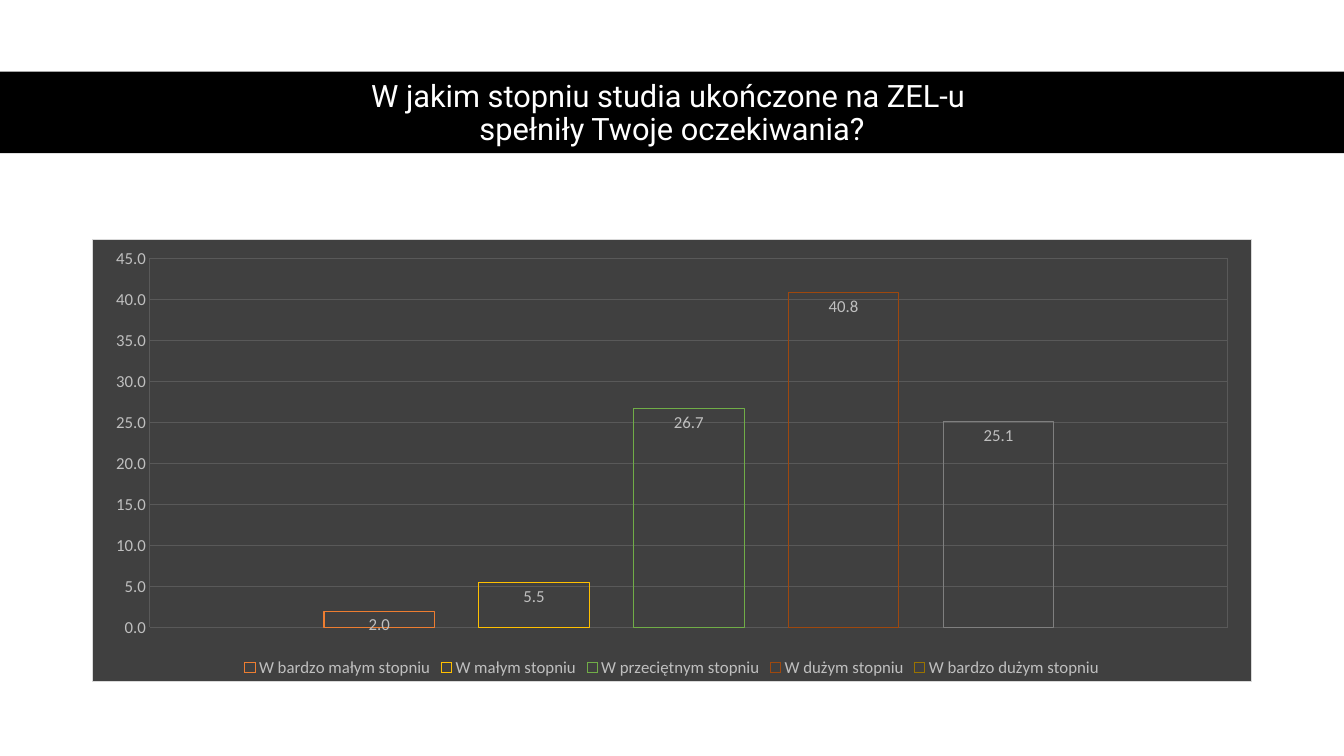
import pptx
import pptx.chart.data
import pptx.dml.color
import pptx.enum.chart
import pptx.enum.shapes
import pptx.enum.text
import pptx.oxml
import pptx.util
from dataclasses import dataclass

Pt = pptx.util.Pt
RGB = pptx.dml.color.RGBColor.from_string


@dataclass(frozen=True)
class Theme:
    band: str = "000000"
    title: str = "FFFFFF"
    panel: str = "404040"
    border: str = "D9D9D9"
    grid: str = "595959"
    label: str = "BFBFBF"
    last_bar: str = "7F7F7F"
    title_font: str = "Roboto"
    chart_font: str = "Calibri"
    title_size: int = 22
    label_size: int = 12
    line: float = 0.75
    number: str = "###0.0"


THEME = Theme()
TITLE = "W jakim stopniu studia ukończone na ZEL-u \vspełniły Twoje oczekiwania?"
ANSWERS = [
    ("W bardzo małym stopniu", 2.0, "ED7D31"),
    ("W małym stopniu", 5.5, "FFC000"),
    ("W przeciętnym stopniu", 26.7, "70AD47"),
    ("W dużym stopniu", 40.8, "9E480E"),
    ("W bardzo dużym stopniu", 25.1, "997300"),
]


def style_font(font, name, size, color):
    font.name = name
    font.size = Pt(size)
    font.color.rgb = RGB(color)


def style_label(font):
    style_font(font, THEME.chart_font, THEME.label_size, THEME.label)


def style_line(line, color):
    line.color.rgb = RGB(color)
    line.width = Pt(THEME.line)


def add_title_band(s, x, y, w, h):
    """Black band over the full width, with the title inset on both sides."""
    band = s.shapes.add_shape(
        pptx.enum.shapes.MSO_SHAPE.RECTANGLE, Pt(x), Pt(y), Pt(w), Pt(h))
    band.shadow.inherit = False
    band.fill.solid()
    band.fill.fore_color.rgb = RGB(THEME.band)
    band.line.fill.background()

    title = s.shapes.title
    inset = 66
    title.left, title.top = Pt(x + inset), Pt(y + 2)
    title.width, title.height = Pt(w - 2 * inset), Pt(h - 2)
    s.shapes._spTree.append(title._element)  # in front of the band
    tf = title.text_frame
    tf.word_wrap = True
    tf.auto_size = pptx.enum.text.MSO_AUTO_SIZE.NONE
    tf.vertical_anchor = pptx.enum.text.MSO_ANCHOR.MIDDLE
    tf.text = TITLE
    p = tf.paragraphs[0]
    p.alignment = pptx.enum.text.PP_ALIGN.CENTER
    p.line_spacing = 0.9
    for r in p.runs:
        style_font(r.font, THEME.title_font, THEME.title_size, THEME.title)


def fill_chart_area(chart):
    """Background and border of the whole chart; must precede c:txPr."""
    area = pptx.oxml.parse_xml(
        '<c:spPr xmlns:c="http://schemas.openxmlformats.org/drawingml/2006/chart"'
        ' xmlns:a="http://schemas.openxmlformats.org/drawingml/2006/main">'
        f'<a:solidFill><a:srgbClr val="{THEME.panel}"/></a:solidFill>'
        f'<a:ln w="{Pt(THEME.line)}"><a:solidFill>'
        f'<a:srgbClr val="{THEME.border}"/></a:solidFill></a:ln></c:spPr>')
    chart._chartSpace.chart.addnext(area)


def style_axes(chart):
    for axis in (chart.category_axis, chart.value_axis):
        axis.has_major_gridlines = True
        style_line(axis.major_gridlines.format.line, THEME.grid)
    chart.category_axis.visible = False
    values = chart.value_axis
    values.minimum_scale, values.maximum_scale, values.major_unit = 0, 45, 5
    values.major_tick_mark = pptx.enum.chart.XL_TICK_MARK.NONE
    values.format.line.fill.background()
    values.tick_labels.number_format = THEME.number
    values.tick_labels.number_format_is_linked = False
    style_label(values.tick_labels.font)


def style_series(series, color):
    series.format.fill.background()
    style_line(series.format.line, color)
    labels = series.data_labels
    labels.show_value = True
    labels.position = pptx.enum.chart.XL_LABEL_POSITION.INSIDE_END
    labels.number_format = THEME.number
    labels.number_format_is_linked = False
    style_label(labels.font)


def add_answer_chart(s, x, y, w, h):
    data = pptx.chart.data.CategoryChartData(number_format=THEME.number)
    data.categories = ["1"]
    for name, value, _ in ANSWERS:
        data.add_series(name, [value])
    chart = s.shapes.add_chart(
        pptx.enum.chart.XL_CHART_TYPE.COLUMN_CLUSTERED,
        Pt(x), Pt(y), Pt(w), Pt(h), data).chart
    chart.has_title = False
    style_label(chart.font)
    fill_chart_area(chart)
    style_axes(chart)

    plot = chart.plots[0]
    plot.vary_by_categories = False
    plot.gap_width, plot.overlap = 315, -40
    for series, (_, _, color) in zip(plot.series, ANSWERS):
        style_series(series, color)
    last = plot.series[len(ANSWERS) - 1].points[0].format
    last.fill.background()
    style_line(last.line, THEME.last_bar)

    chart.has_legend = True
    chart.legend.position = pptx.enum.chart.XL_LEGEND_POSITION.BOTTOM
    chart.legend.include_in_layout = False
    style_label(chart.legend.font)


def main():
    prs = pptx.Presentation()
    prs.slide_width, prs.slide_height = Pt(960), Pt(540)
    s = prs.slides.add_slide(prs.slide_layouts[5])
    add_title_band(s, 0, 51.2, 960, 58.2)
    add_answer_chart(s, 66, 170.8, 828, 316.4)
    prs.save("out.pptx")


if __name__ == "__main__":
    main()
